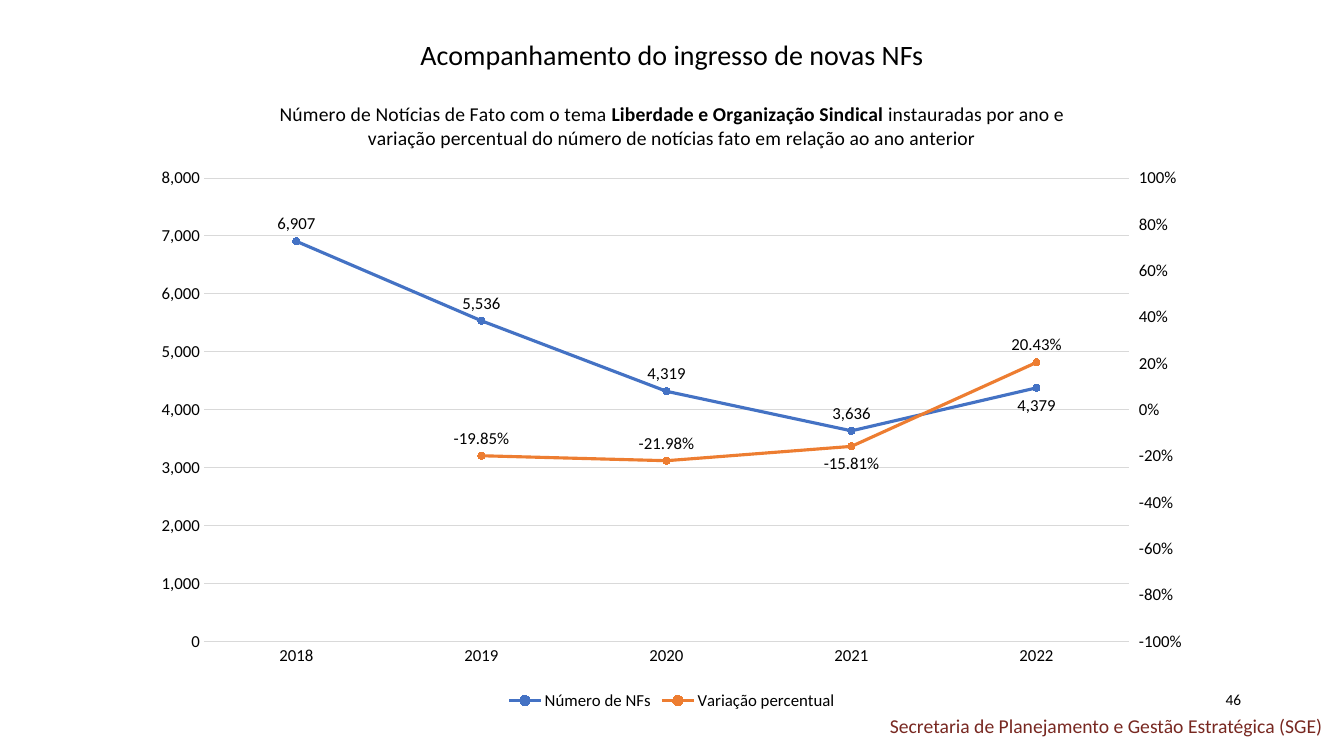
from copy import deepcopy

from pptx import Presentation
from pptx import util as u
from pptx.chart.axis import CategoryAxis, ValueAxis
from pptx.chart.data import CategoryChartData
from pptx.dml.color import RGBColor
from pptx.enum import chart as ch
from pptx.enum import text
from pptx.oxml import parse_xml
from pptx.oxml.ns import nsdecls

THEME = {
    "font": "Calibri",
    "ink": "000000", "footer": "782821", "grid": "D9D9D9",
    "count": "4472C4", "variation": "ED7D31",
    "heading_size": 20, "subtitle_size": 14, "chart_size": 12, "page_size": 11,
}

deck = Presentation()
deck.slide_width, deck.slide_height = u.Inches(13.33), u.Inches(7.5)
slide = deck.slides.add_slide(deck.slide_layouts[6])
COLUMN, ROW = deck.slide_width / 40, deck.slide_height / 30


def style(font, size, color=THEME["ink"], bold=False):
    font.name, font.size, font.bold = THEME["font"], u.Pt(size), bold
    font.color.rgb = RGBColor.from_string(color)


def cells(left, top, width, height):
    """Turn grid columns and rows into slide lengths."""
    return [int(n * unit) for n, unit in
            zip((left, top, width, height), (COLUMN, ROW, COLUMN, ROW))]


# Footer, heading and page number
align = text.PP_ALIGN
for words, place, alignment, size, color in (
    ("Secretaria de Planejamento e Gestão Estratégica (SGE)",
     (21.48, 28.12, 18.18, 1.36), align.RIGHT, THEME["subtitle_size"], THEME["footer"]),
    ("Acompanhamento do ingresso de novas NFs",
     (10, 1.28, 20, 1.76), align.CENTER, THEME["heading_size"], THEME["ink"]),
    ("46", (36.18, 27.2, 1.5, 1.16), align.LEFT, THEME["page_size"], THEME["ink"]),
):
    frame = slide.shapes.add_textbox(*cells(*place)).text_frame
    frame.word_wrap = True
    frame.auto_size = text.MSO_AUTO_SIZE.SHAPE_TO_FIT_TEXT
    frame.text = words
    frame.paragraphs[0].alignment = alignment
    style(frame.paragraphs[0].runs[0].font, size, color)

# Chart data
data = CategoryChartData()
data.categories = ["2018", "2019", "2020", "2021", "2022"]
data.add_series("Número de NFs", (6907, 5536, 4319, 3636, 4379), "#,##0")
data.add_series("Variação percentual",
                (None, -0.1985, -0.2198, -0.1581, 0.2043), "0.00%")
chart = slide.shapes.add_chart(
    ch.XL_CHART_TYPE.LINE_MARKERS, *cells(4.17, 3.16, 31.65, 25.2), data).chart
style(chart.font, THEME["chart_size"])

# Chart title and legend
chart.has_title = True
subtitle = chart.chart_title.text_frame.paragraphs[0]
for words, bold in (
    ("Número de Notícias de Fato com o tema ", False),
    ("Liberdade e Organização Sindical", True),
    (" instauradas por ano e variação percentual do número de notícias fato "
     "em relação ao ano anterior", False),
):
    run = subtitle.add_run()
    run.text = words
    style(run.font, THEME["subtitle_size"], bold=bold)
chart.has_legend = True
chart.legend.position = ch.XL_LEGEND_POSITION.BOTTOM
chart.legend.include_in_layout = False
style(chart.legend.font, THEME["chart_size"])

# Series; one label of each sits below its point
plot = chart.plots[0]
plot.vary_by_categories = False
for series, color, number_format, low_point in zip(
        plot.series, (THEME["count"], THEME["variation"]), ("#,##0", "0.00%"), (4, 3)):
    rgb = RGBColor.from_string(color)
    series.smooth = False
    series.format.line.width = u.Pt(2.25)
    series.format.line.color.rgb = rgb
    series.marker.style, series.marker.size = ch.XL_MARKER_STYLE.CIRCLE, 5
    series.marker.format.fill.solid()
    series.marker.format.fill.fore_color.rgb = rgb
    series.marker.format.line.color.rgb = rgb
    labels = series.data_labels
    labels.show_value = True
    labels.number_format, labels.number_format_is_linked = number_format, False
    labels.position = ch.XL_LABEL_POSITION.ABOVE
    style(labels.font, THEME["chart_size"])
    low_label = series.points[low_point].data_label
    style(low_label.font, THEME["chart_size"])
    low_label.position = ch.XL_LABEL_POSITION.BELOW

# Left and bottom axes
years, counts = chart.category_axis, chart.value_axis
for axis in (years, counts):
    axis.major_tick_mark = axis.minor_tick_mark = ch.XL_TICK_MARK.NONE
    style(axis.tick_labels.font, THEME["chart_size"])
counts.minimum_scale, counts.maximum_scale, counts.major_unit = 0, 8000, 1000
counts.tick_labels.number_format = "#,##0"
counts.tick_labels.number_format_is_linked = False
counts.format.line.fill.background()
counts.has_major_gridlines = True
for line in (years.format.line, counts.major_gridlines.format.line):
    line.width = u.Pt(0.75)
    line.color.rgb = RGBColor.from_string(THEME["grid"])

# Second line group with its own axes for the percentage
area = chart.element.xpath(".//c:plotArea")[0]
count_group = area.xpath("c:lineChart")[0]
variation_group = deepcopy(count_group)
count_group.remove(count_group.xpath("c:ser")[1])
variation_group.remove(variation_group.xpath("c:ser")[0])
count_group.addnext(variation_group)
right_values, right_years = (deepcopy(area.xpath(f"c:{tag}")[0])
                             for tag in ("valAx", "catAx"))
area.xpath("c:valAx")[0].addnext(right_values)
right_values.addnext(right_years)
ids = {right_years.xpath("c:axId")[0].get("val"): "5001",
       right_values.xpath("c:axId")[0].get("val"): "5002"}
for part in (variation_group, right_values, right_years):
    for reference in part.xpath("c:axId | c:crossAx"):
        reference.set("val", ids[reference.get("val")])
right_values.xpath("c:axPos")[0].set("val", "r")
right_values.xpath("c:crosses")[0].set("val", "max")

percent = ValueAxis(right_values)
percent.has_major_gridlines = False
percent.minimum_scale, percent.maximum_scale, percent.major_unit = -1, 1, 0.2
percent.major_tick_mark = ch.XL_TICK_MARK.OUTSIDE
percent.tick_labels.number_format = "0%"
CategoryAxis(right_years).visible = False

# Plot area as shares of the chart
for layout in area.xpath("c:layout"):
    area.remove(layout)
shares = "".join(f'<c:{key} val="{share}"/>' for key, share in
                 (("x", 0.06), ("y", 0.155), ("w", 0.87), ("h", 0.73)))
area.insert(0, parse_xml(
    f'<c:layout {nsdecls("c")}><c:manualLayout><c:layoutTarget val="inner"/>'
    f'<c:xMode val="edge"/><c:yMode val="edge"/>{shares}</c:manualLayout></c:layout>'))

deck.save("out.pptx")
